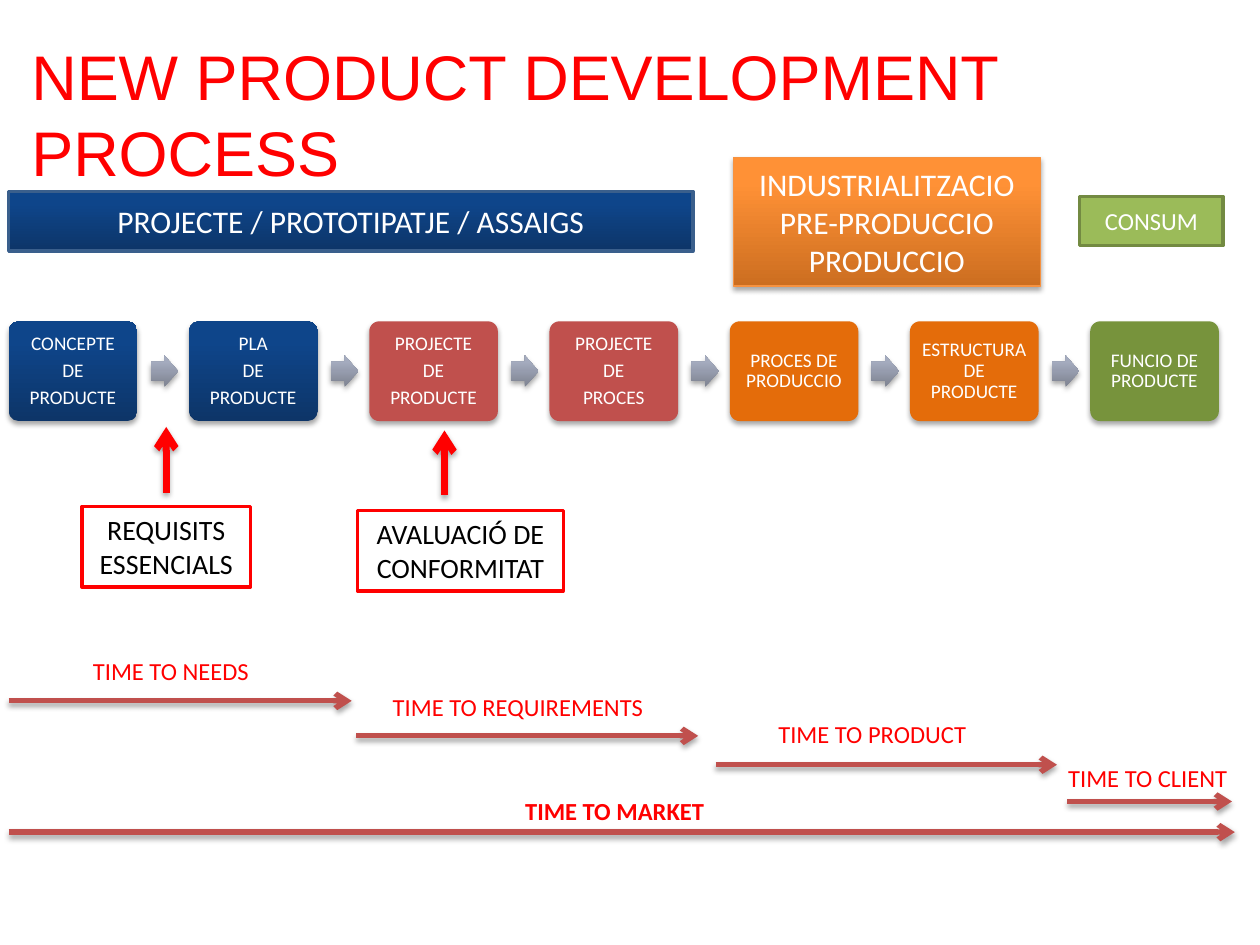
from pptx import Presentation
from pptx.dml.color import RGBColor
from pptx.enum.shapes import MSO_CONNECTOR, MSO_SHAPE
from pptx.enum.text import MSO_ANCHOR, PP_ALIGN
from pptx.oxml import parse_xml
from pptx.oxml.ns import nsdecls
from pptx.util import Pt

THEME = {
    "heading_font": "Arial", "body_font": "Calibri",
    "title": 36, "phase": 18, "note": 16, "label": 14, "step": 11,
    "white": "FFFFFF", "black": "000000", "red": "FF0000",
    # a pair runs from the bottom colour to the top colour
    "blue": ("0D3568", "0E458A"), "orange": ("CC6E20", "FF9136"),
    "gray": ("7E8391", "A4ABBE"),
    "brick": "C0504D", "amber": "E46C0A", "olive": "77933C", "lime": "9BBB59",
    "blue_edge": "3A5F8C", "orange_edge": "F69240", "lime_edge": "738A42",
}

# Content; boxes are (left, top, width, height) in points
TITLE = "NEW PRODUCT DEVELOPMENT PROCESS"
PHASES = [  # lines, box, size, fill, edge, edge width, shadow
    (["PROJECTE / PROTOTIPATJE / ASSAIGS"], (5, 109.5, 391, 34),
     "phase", "blue", "blue_edge", 2, False),
    (["INDUSTRIALITZACIO PRE-PRODUCCIO", "PRODUCCIO"], (419, 90, 175.7, 73.5),
     "phase", "orange", "orange_edge", 0.75, True),
    (["CONSUM"], (617, 112.3, 82, 28),
     "label", "lime", "lime_edge", 2, False),
]
STEPS = [
    (["CONCEPTE", "DE", "PRODUCTE"], "blue"),
    (["PLA", "DE", "PRODUCTE"], "blue"),
    (["PROJECTE", "DE", "PRODUCTE"], "brick"),
    (["PROJECTE", "DE", "PROCES"], "brick"),
    (["PROCES DE PRODUCCIO"], "amber"),
    (["ESTRUCTURA DE PRODUCTE"], "amber"),
    (["FUNCIO DE PRODUCTE"], "olive"),
]
NOTES = [  # lines, box, arrow x, arrow start y, arrow end y
    (["REQUISITS", "ESSENCIALS"], (46.8, 289.4, 96.5, 46), 95, 281.5, 244),
    (["AVALUACIÓ DE CONFORMITAT"], (204.3, 291.6, 117.7, 46), 254, 283, 246),
]
TIMES = [  # label, label box, arrow start x, arrow end x, arrow y, bold, align
    ("TIME TO NEEDS", (46, 371.5, 137.5, 24.3), 5, 201, 400.5, False, PP_ALIGN.LEFT),
    ("TIME TO REQUIREMENTS", (193, 391.7, 206, 24.3), 203.5, 399, 420.5, False, PP_ALIGN.CENTER),
    ("TIME TO PRODUCT", (437.7, 407.5, 156, 24.3), 409, 604, 437, False, PP_ALIGN.LEFT),
    ("TIME TO CLIENT", (603.3, 432.7, 111.6, 24.3), 610, 704, 458, False, PP_ALIGN.LEFT),
    ("TIME TO MARKET", (293, 451.4, 137.5, 24.3), 5, 705.6, 475.5, True, PP_ALIGN.LEFT),
]

# Step row grid
STEP_LEFT, STEP_TOP, STEP_WIDTH, STEP_HEIGHT, STEP_PITCH = 5, 183.6, 73.5, 57, 103
LINK_OFFSET, LINK_WIDTH, LINK_HEIGHT = 81, 15.8, 18

prs = Presentation()
prs.slide_width, prs.slide_height = Pt(720), Pt(540)
slide = prs.slides.add_slide(prs.slide_layouts[6])


def rgb(name):
    return RGBColor.from_string(THEME[name])


def set_shadow(shape, visible):
    outer = (
        f'<a:outerShdw blurRad="{Pt(3.1)}" dist="{Pt(1.8)}" dir="5400000" rotWithShape="0">'
        '<a:srgbClr val="000000"><a:alpha val="35000"/></a:srgbClr></a:outerShdw>'
    ) if visible else ""
    shape._element.spPr.append(
        parse_xml(f'<a:effectLst {nsdecls("a")}>{outer}</a:effectLst>'))


def paint(fill, name):
    if name is None:
        fill.background()
    elif isinstance(THEME[name], tuple):
        fill.gradient()
        fill.gradient_angle = 90
        for stop, color, position in zip(fill.gradient_stops, THEME[name], (0, 0.8)):
            stop.color.rgb = RGBColor.from_string(color)
            stop.position = position
    else:
        fill.solid()
        fill.fore_color.rgb = rgb(name)


def write(shape, lines, size, color, align=PP_ALIGN.CENTER, anchor=MSO_ANCHOR.MIDDLE,
          font="body_font", bold=False):
    frame = shape.text_frame
    frame.word_wrap = True
    frame.vertical_anchor = anchor
    frame.text = "\n".join(lines)
    for paragraph in frame.paragraphs:
        paragraph.alignment = align
        for run in paragraph.runs:
            run.font.name = THEME[font]
            run.font.size = Pt(THEME[size])
            run.font.bold = bold
            run.font.color.rgb = rgb(color)
    return frame


def add_block(kind, box, fill, edge=None, edge_width=1, shadow=True):
    block = slide.shapes.add_shape(kind, *map(Pt, box))
    paint(block.fill, fill)
    if edge:
        block.line.color.rgb = rgb(edge)
        block.line.width = Pt(edge_width)
    else:
        block.line.fill.background()
    set_shadow(block, shadow)
    return block


def add_label(text, box, size, **style):
    label = slide.shapes.add_textbox(*map(Pt, box))
    write(label, [text], size, "red", anchor=MSO_ANCHOR.TOP, **style)


def add_arrow(x1, y1, x2, y2, color, width):
    arrow = slide.shapes.add_connector(
        MSO_CONNECTOR.STRAIGHT, Pt(x1), Pt(y1), Pt(x2), Pt(y2))
    arrow.line.color.rgb = rgb(color)
    arrow.line.width = Pt(width)
    arrow.line._get_or_add_ln().append(
        parse_xml(f'<a:tailEnd {nsdecls("a")} type="arrow"/>'))
    set_shadow(arrow, True)


# Process steps with block arrows between them
for index, (lines, fill) in enumerate(STEPS):
    left = STEP_LEFT + index * STEP_PITCH
    step = add_block(MSO_SHAPE.ROUNDED_RECTANGLE,
                     (left, STEP_TOP, STEP_WIDTH, STEP_HEIGHT), fill)
    step.adjustments[0] = 0.1
    frame = write(step, lines, "step", "white")
    frame.margin_left = frame.margin_right = Pt(5)
    frame.margin_top = frame.margin_bottom = Pt(5)
    for paragraph in frame.paragraphs:
        paragraph.line_spacing = 0.9
        paragraph.space_after = Pt(3.8)
    if index < len(STEPS) - 1:
        link_top = STEP_TOP + (STEP_HEIGHT - LINK_HEIGHT) / 2
        link = add_block(MSO_SHAPE.RIGHT_ARROW,
                         (left + LINK_OFFSET, link_top, LINK_WIDTH, LINK_HEIGHT), "gray")
        link.adjustments[0] = 0.6

# Phase banners
for lines, box, size, fill, edge, edge_width, shadow in PHASES:
    phase = add_block(MSO_SHAPE.RECTANGLE, box, fill, edge, edge_width, shadow)
    write(phase, lines, size, "white")

# Time arrows and labels
for text, box, start, end, y, bold, align in TIMES:
    add_arrow(start, y, end, y, "brick", 3)
    add_label(text, box, "label", align=align, bold=bold)

# Title
add_label(TITLE, (10.8, 18, 694, 51), "title", align=PP_ALIGN.LEFT, font="heading_font")

# Notes pointing up at the steps
for lines, box, x, start, end in NOTES:
    note = add_block(MSO_SHAPE.RECTANGLE, box, None, "red", 2, shadow=False)
    write(note, lines, "note", "black", anchor=MSO_ANCHOR.TOP)
    add_arrow(x, start, x, end, "red", 4)

prs.save("out.pptx")
